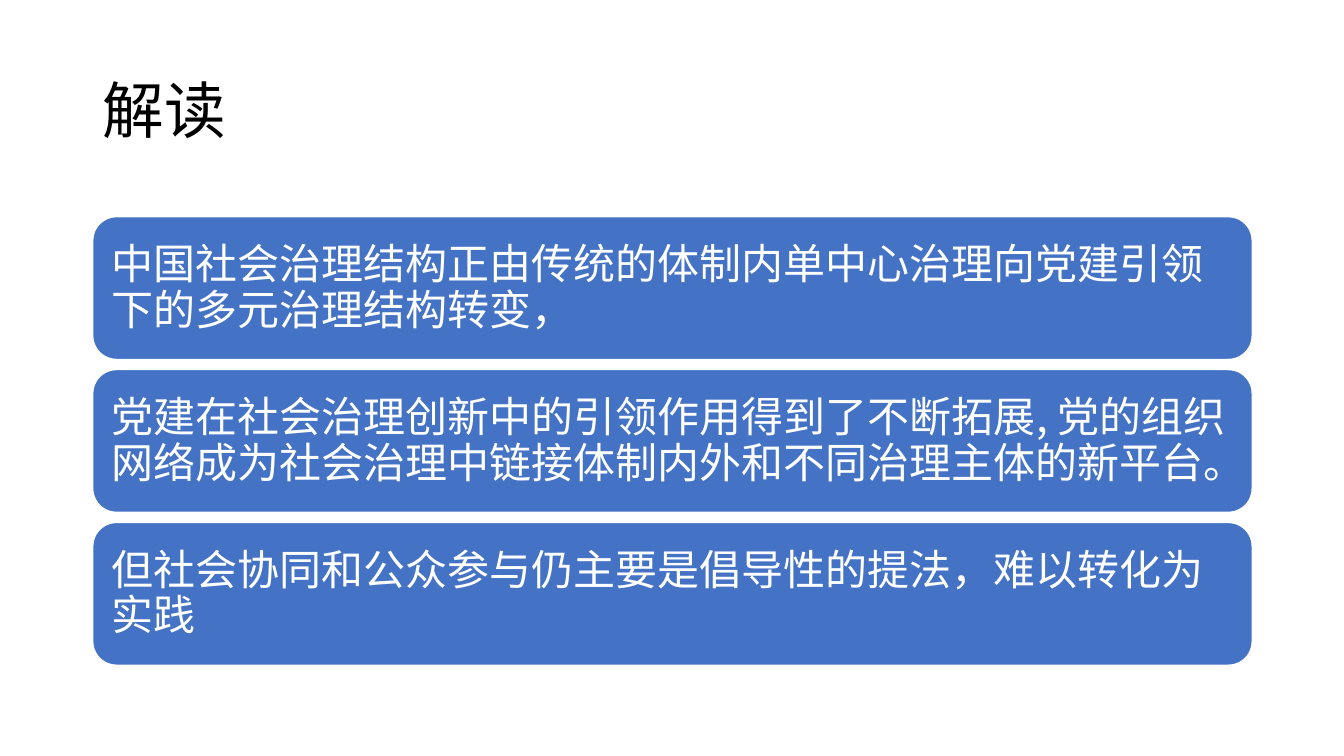
from dataclasses import dataclass

from lxml import etree
from pptx import Presentation
from pptx import util as u
from pptx.dml.color import RGBColor
from pptx.enum import shapes, text
from pptx.oxml.ns import qn


@dataclass(frozen=True)
class Theme:
    font: str = "Noto Sans CJK SC"
    ink: RGBColor = RGBColor(0, 0, 0)
    paper: RGBColor = RGBColor(255, 255, 255)
    card: RGBColor = RGBColor(0x44, 0x72, 0xC4)
    title_size: int = 44
    card_size: int = 30
    title_spacing: float = 0.9
    card_spacing: u.Length = u.Pt(32.5)


THEME = Theme()
WIDTH, HEIGHT = 13.33, 7.5
LEFT, CONTENT_WIDTH = 0.92, 11.5
TITLE_BOX = (LEFT, 0.4, CONTENT_WIDTH, 1.45)
CARDS_BOX = (LEFT, 2.15, CONTENT_WIDTH, 4.45)
CARD_GAP = 0.1

POINTS = [
    "中国社会治理结构正由传统的体制内单中心治理向党建引领下的多元治理结构转变，",
    "党建在社会治理创新中的引领作用得到了不断拓展, 党的组织网络成为社会治理中链接体制内外和不同治理主体的新平台。",
    "但社会协同和公众参与仍主要是倡导性的提法，难以转化为实践",
]


def write(frame, content, *, size, color, spacing, inset=(0.1, 0.05)):
    frame.word_wrap = True
    frame.auto_size = text.MSO_AUTO_SIZE.NONE
    frame.vertical_anchor = text.MSO_ANCHOR.MIDDLE
    frame.margin_left = frame.margin_right = u.Inches(inset[0])
    frame.margin_top = frame.margin_bottom = u.Inches(inset[1])
    para = frame.paragraphs[0]
    para.alignment = text.PP_ALIGN.LEFT
    para.line_spacing = spacing
    span = para.add_run()
    span.text = content
    span.font.size = u.Pt(size)
    span.font.color.rgb = color
    span.font.name = THEME.font
    east_asian = etree.SubElement(span.font._element, qn("a:ea"))
    east_asian.set("typeface", THEME.font)


def place_title(page, box, content):
    title = page.shapes.title
    title.left, title.top, title.width, title.height = map(u.Inches, box)
    write(title.text_frame, content, size=THEME.title_size,
          color=THEME.ink, spacing=THEME.title_spacing)


def place_cards(page, box, points):
    """Stack equal rounded cards to fill the box."""
    left, top, width, height = box
    card_height = (height - CARD_GAP * (len(points) - 1)) / len(points)
    for row, point in enumerate(points):
        card_top = top + row * (card_height + CARD_GAP)
        card = page.shapes.add_shape(
            shapes.MSO_SHAPE.ROUNDED_RECTANGLE,
            *map(u.Inches, (left, card_top, width, card_height)))
        card.shadow.inherit = False
        card.fill.solid()
        card.fill.fore_color.rgb = THEME.card
        card.line.color.rgb = THEME.paper
        card.line.width = u.Pt(1)
        write(card.text_frame, point, size=THEME.card_size, color=THEME.paper,
              spacing=THEME.card_spacing, inset=(0.12, 0.12))


def main():
    deck = Presentation()
    deck.slide_width, deck.slide_height = u.Inches(WIDTH), u.Inches(HEIGHT)
    title_only = deck.slide_layouts.get_by_name("Title Only")
    page = deck.slides.add_slide(title_only)
    place_title(page, TITLE_BOX, "解读")
    place_cards(page, CARDS_BOX, POINTS)
    deck.save("out.pptx")


if __name__ == "__main__":
    main()
